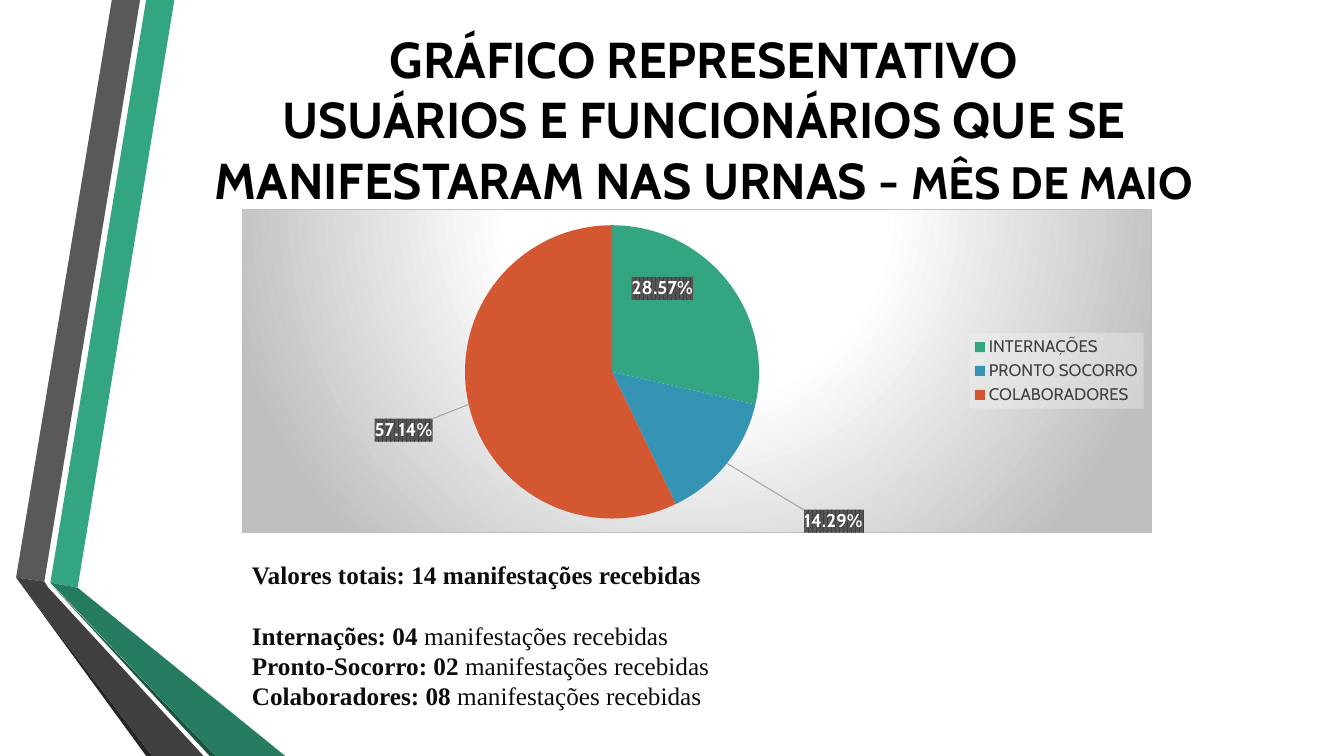
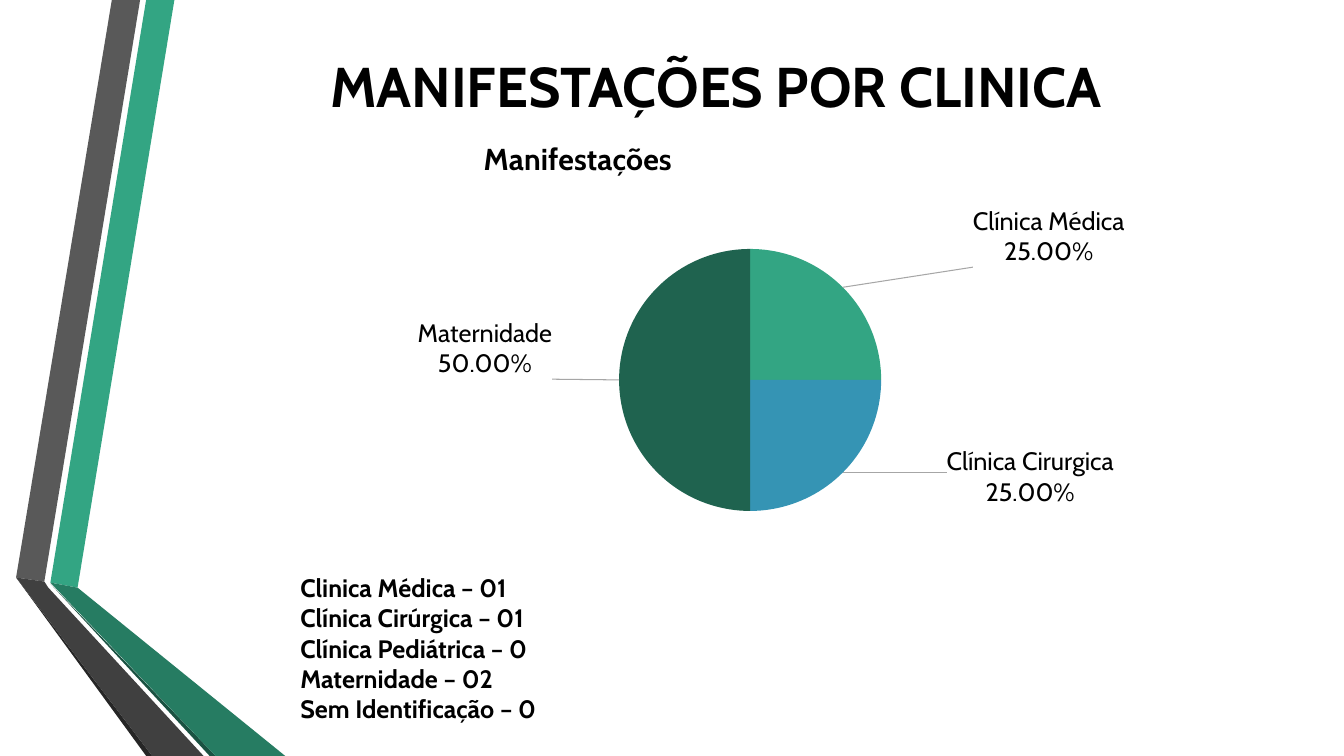
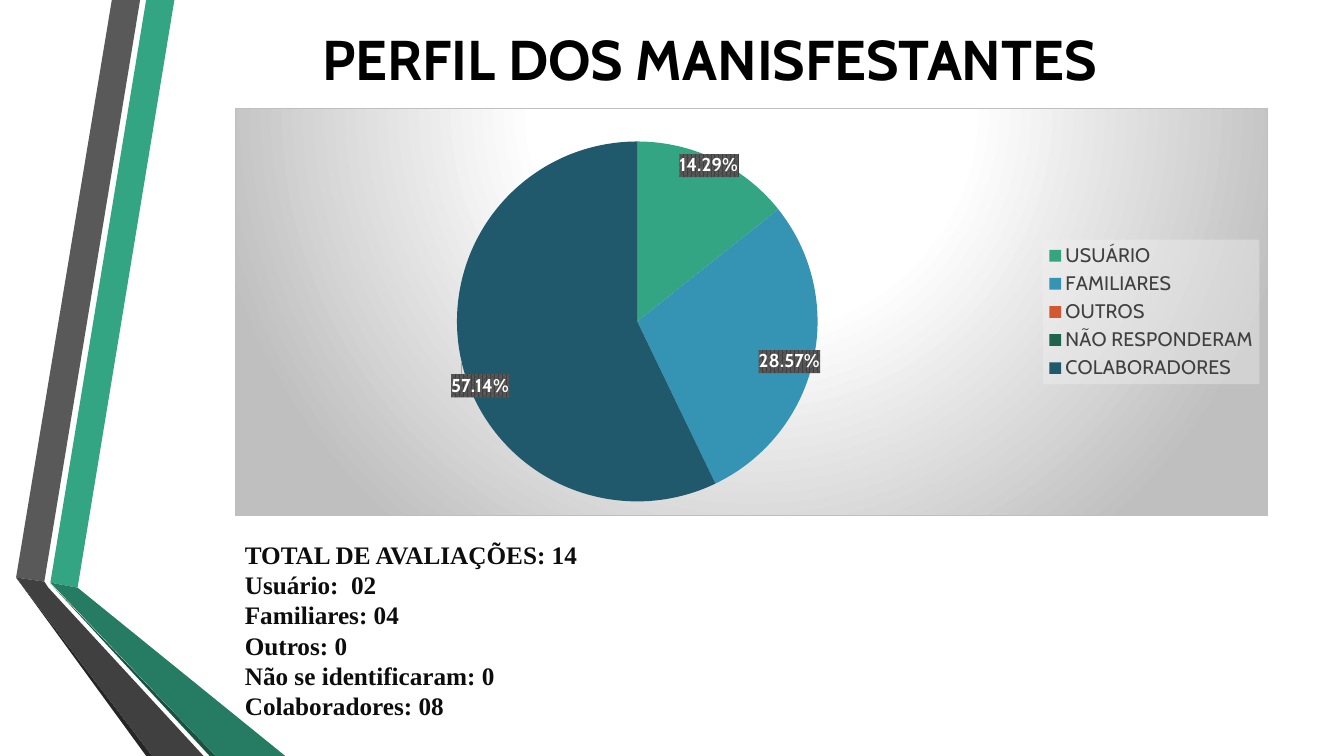
from copy import deepcopy
from dataclasses import dataclass
from math import cos, pi, sin

from lxml import etree
from pptx import Presentation
from pptx.chart.data import CategoryChartData
from pptx.dml.color import RGBColor
from pptx.enum.chart import XL_CHART_TYPE, XL_LABEL_POSITION, XL_LEGEND_POSITION
from pptx.enum.text import MSO_ANCHOR, MSO_AUTO_SIZE, PP_ALIGN
from pptx.oxml import parse_xml
from pptx.oxml.ns import nsdecls, qn
from pptx.util import Inches, Pt

PIE = XL_CHART_TYPE.PIE
LABEL_CENTER = XL_LABEL_POSITION.CENTER
LABEL_OUTSIDE = XL_LABEL_POSITION.OUTSIDE_END
LEGEND_RIGHT = XL_LEGEND_POSITION.RIGHT
MIDDLE = MSO_ANCHOR.MIDDLE
NO_AUTOFIT = MSO_AUTO_SIZE.NONE
CENTER, LEFT, JUSTIFY = PP_ALIGN.CENTER, PP_ALIGN.LEFT, PP_ALIGN.JUSTIFY

LABEL_HEIGHT = 0.6
LABEL_GAP = 0.06


@dataclass(frozen=True)
class Theme:
    heading_font: str = "Cabin"
    body_font: str = "Times New Roman"
    black: str = "000000"
    ink: str = "0D0D0D"
    white: str = "FFFFFF"
    legend_ink: str = "404040"
    panel_edge: str = "BFBFBF"
    leader: str = "A6A6A6"
    green: str = "33A583"
    blue: str = "3594B4"
    orange: str = "D35731"
    dark_green: str = "1F634F"
    dark_blue: str = "20596C"
    title_size: float = 40
    long_title_size: float = 36
    month_size: float = 32.4
    chart_title_size: float = 21.6
    body_size: float = 18
    badge_size: float = 13.3
    chart_size: float = 10


THEME = Theme()
SLICE_COLOURS = (THEME.green, THEME.blue, THEME.orange, THEME.dark_green, THEME.dark_blue)

RIBBONS = (
    (THEME.green, ((0.5, 5.78), (0.77, 5.83), (1.73, 0), (1.45, 0))),
    ("595959", ((1.39, 0), (1.11, 0), (0.16, 5.73), (0.44, 5.77))),
    ("262626", ((0.16, 5.73), (1.45, 7.5), (1.51, 7.5))),
    ("1A5242", ((0.5, 5.79), (2.08, 7.5), (2.14, 7.5))),
    ("267C62", ((0.5, 5.78), (2.14, 7.5), (2.83, 7.5), (0.77, 5.83))),
    ("404040", ((2.02, 7.5), (0.48, 5.83), (0.44, 5.77), (0.16, 5.73), (1.51, 7.5))),
)

PANEL_FILL = f"""<c:spPr {nsdecls("c", "a")}>
<a:gradFill><a:gsLst>
<a:gs pos="0"><a:srgbClr val="{THEME.white}"/></a:gs>
<a:gs pos="39000"><a:srgbClr val="{THEME.white}"/></a:gs>
<a:gs pos="100000"><a:srgbClr val="{THEME.panel_edge}"/></a:gs>
</a:gsLst><a:path path="circle"><a:fillToRect l="50000" t="-80000" r="50000" b="180000"/></a:path></a:gradFill>
<a:ln w="9525"><a:solidFill><a:srgbClr val="{THEME.panel_edge}"/></a:solidFill></a:ln></c:spPr>"""

BADGE_FILL = f"""<c:spPr {nsdecls("c", "a")}><a:pattFill prst="pct75">
<a:fgClr><a:srgbClr val="404040"/></a:fgClr><a:bgClr><a:srgbClr val="595959"/></a:bgClr>
</a:pattFill></c:spPr>"""

LEGEND_FILL = f"""<c:spPr {nsdecls("c", "a")}><a:solidFill>
<a:srgbClr val="F2F2F2"><a:alpha val="39000"/></a:srgbClr></a:solidFill></c:spPr>"""

LEADER_LINES = f"""<c:leaderLines {nsdecls("c", "a")}><c:spPr><a:ln w="9525"><a:solidFill>
<a:srgbClr val="{THEME.leader}"/></a:solidFill></a:ln></c:spPr></c:leaderLines>"""


def style_font(font, size, colour, bold=False, name=THEME.heading_font):
    font.name = name
    font.size = Pt(size)
    font.bold = bold
    font.color.rgb = RGBColor.from_string(colour)


def manual_layout(**settings):
    layout = etree.Element(qn("c:layout"))
    manual = etree.SubElement(layout, qn("c:manualLayout"))
    for tag, value in settings.items():
        text = value if isinstance(value, str) else f"{value:.4f}"
        etree.SubElement(manual, qn(f"c:{tag}")).set("val", text)
    return layout


def set_layout(parent, index, **settings):
    for old in parent.findall(qn("c:layout")):
        parent.remove(old)
    parent.insert(index, manual_layout(**settings))


def outward(amount):
    return 0 if abs(amount) < 0.05 else (1 if amount > 0 else -1)


class Report:
    def __init__(self):
        self.deck = Presentation()
        self.deck.slide_width, self.deck.slide_height = Inches(13.33), Inches(7.5)
        self.layout = self.deck.slide_layouts[5]
        self.slide = None

    def add_slide(self):
        first = self.slide is None
        self.slide = self.deck.slides.add_slide(self.layout)
        if first:
            self.share_ribbons()

    def share_ribbons(self):
        group = self.slide.shapes.add_group_shape()
        for colour, points in RIBBONS:
            corners = [(Inches(x), Inches(y)) for x, y in points]
            builder = group.shapes.build_freeform(*corners[0])
            builder.add_line_segments(corners[1:], close=True)
            ribbon = builder.convert_to_shape()
            ribbon.shadow.inherit = False
            ribbon.fill.solid()
            ribbon.fill.fore_color.rgb = RGBColor.from_string(colour)
            ribbon.line.fill.background()
        for number, properties in enumerate(group.element.iter(qn("p:cNvPr")), 100):
            properties.set("id", str(number))
        self.layout.shapes.element.append(group.element)

    def title(self, text, area, size=THEME.title_size, ending=""):
        title = self.slide.shapes.title
        title.left, title.top, title.width, title.height = map(Inches, area)
        frame = title.text_frame
        frame.text = text
        frame.word_wrap = True
        frame.auto_size = NO_AUTOFIT
        frame.vertical_anchor = MIDDLE
        para = frame.paragraphs[0]
        para.alignment = CENTER
        for span in para.runs:
            style_font(span.font, size, THEME.black, True)
        if ending:
            span = para.add_run()
            span.text = ending
            style_font(span.font, THEME.month_size, THEME.black, True)

    def summary(self, lines, area, font=THEME.body_font, colour=THEME.ink,
                alignment=LEFT, first_gap=0):
        box = self.slide.shapes.add_textbox(*map(Inches, area))
        frame = box.text_frame
        frame.word_wrap = True
        for index, (strong, plain) in enumerate(lines):
            para = frame.add_paragraph() if index else frame.paragraphs[0]
            para.text = strong
            para.alignment = alignment
            if index == 1 and first_gap:
                para.space_before = Pt(first_gap)
            if plain:
                para.add_run().text = plain
            for position, span in enumerate(para.runs):
                style_font(span.font, THEME.body_size, colour, position == 0, font)

    def pie(self, name, slices, area, center, radius, label_centers,
            heading=None, legend_size=None, label_widths=()):
        data = CategoryChartData()
        data.categories = [category for category, _ in slices]
        data.add_series(name, [value for _, value in slices])
        chart = self.slide.shapes.add_chart(PIE, *map(Inches, area), data).chart
        style_font(chart.font, THEME.body_size if heading else THEME.chart_size, THEME.black)
        left, top, width, height = area
        set_layout(chart.element.find(f".//{qn('c:plotArea')}"), 0,
                   layoutTarget="inner", xMode="edge", yMode="edge",
                   x=(center[0] - radius - left) / width,
                   y=(center[1] - radius - top) / height,
                   w=2 * radius / width, h=2 * radius / height)
        plot = chart.plots[0]
        plot.vary_by_categories = True
        for index in range(len(slices)):
            fill = plot.series[0].points[index].format.fill
            fill.solid()
            fill.fore_color.rgb = RGBColor.from_string(SLICE_COLOURS[index])
        chart.has_title = bool(heading)
        if heading:
            frame = chart.chart_title.text_frame
            frame.text = heading
            style_font(frame.paragraphs[0].runs[0].font, THEME.chart_title_size, THEME.black, True)
            set_layout(chart.chart_title.element, 1, xMode="edge", yMode="edge", x=0.24, y=0.02)
        chart.has_legend = bool(legend_size)
        if legend_size:
            chart.legend.position = LEGEND_RIGHT
            chart.legend.include_in_layout = False
            style_font(chart.legend.font, legend_size, THEME.legend_ink)
            for owner, fill in ((chart.element, PANEL_FILL),
                                (chart.element.find(f".//{qn('c:legend')}"), LEGEND_FILL)):
                owner.find(qn("c:txPr")).addprevious(parse_xml(fill))
        shared = self.label_style(plot.series[0].data_labels, bool(label_widths))
        self.place_labels(plot.series[0].data_labels._element, shared, slices, area,
                          center, radius, label_centers, label_widths)

    def label_style(self, labels, named):
        labels.show_value = False
        labels.show_percentage = True
        labels.show_category_name = named
        labels.number_format = "0.00%"
        labels.number_format_is_linked = False
        labels.position = LABEL_OUTSIDE if named else LABEL_CENTER
        if named:
            style_font(labels.font, THEME.body_size, THEME.black)
        else:
            style_font(labels.font, THEME.badge_size, THEME.white, True)
        root = labels._element
        text_style = root.find(qn("c:txPr"))
        text_style.find(qn("a:bodyPr")).set("wrap", "none")
        if not named:
            text_style.addprevious(parse_xml(BADGE_FILL))
        separator = etree.Element(qn("c:separator"))
        separator.text = "\n"
        root.find(qn("c:showBubbleSize")).addnext(separator)
        shared = [child for child in root if child.tag != qn("c:showLeaderLines")]
        for child in root.findall(qn("c:showLeaderLines")):
            child.set("val", "1")
            child.addnext(parse_xml(LEADER_LINES))
        return shared

    def place_labels(self, root, shared, slices, area, center, radius, label_centers, label_widths):
        total = sum(value for _, value in slices)
        targets = iter(label_centers)
        widths = iter(label_widths)
        start = 0
        for index, (_, value) in enumerate(slices):
            label = etree.Element(qn("c:dLbl"))
            etree.SubElement(label, qn("c:idx")).set("val", str(index))
            if value:
                angle = 2 * pi * (start + value / 2) / total
                across, down = sin(angle), -cos(angle)
                distance = radius + LABEL_GAP if label_widths else radius / 2
                default_x = center[0] + distance * across
                default_y = center[1] + distance * down
                if label_widths:
                    default_x += outward(across) * next(widths) / 2
                    default_y += outward(down) * LABEL_HEIGHT / 2
                x, y = next(targets)
                label.append(manual_layout(x=(x - default_x) / area[2], y=(y - default_y) / area[3]))
                label.extend([deepcopy(child) for child in shared])
            else:
                etree.SubElement(label, qn("c:delete")).set("val", "1")
            root.insert(index, label)
            start += value


def main():
    report = Report()

    report.add_slide()
    report.title("GRÁFICO REPRESENTATIVO\vUSUÁRIOS E FUNCIONÁRIOS QUE SE MANIFESTARAM NAS URNAS - ",
                 (1.22, 0.28, 11.52, 1.79), THEME.long_title_size, "MÊS DE MAIO")
    report.pie("Series 1",
               [("INTERNAÇÕES", 28.57), ("PRONTO SOCORRO", 14.29), ("COLABORADORES", 57.14)],
               (2.4, 2.07, 9.03, 3.22), (6.07, 3.69), 1.46,
               [(6.57, 2.86), (8.27, 5.18), (4, 4.27)], legend_size=12)
    received = "manifestações recebidas"
    report.summary([("Valores totais: 14 manifestações recebidas", ""),
                    ("Internações: 04 ", received),
                    ("Pronto-Socorro: 02 ", received),
                    ("Colaboradores: 08 ", received)],
                   (2.4, 5.5, 9.03, 1.62), alignment=JUSTIFY, first_gap=21.6)

    report.add_slide()
    report.title("MANIFESTAÇÕES POR CLINICA", (1.62, 0.27, 10.96, 1.15))
    report.pie("Manifestações",
               [("Clínica Médica", 25), ("Clínica Cirurgica", 25), ("Clinica Pediátrica", 0),
                ("Maternidade", 50), ("Sem identificação", 0)],
               (2.22, 1.22, 10.51, 4.4), (7.44, 3.77), 1.3,
               [(10.4, 2.35), (10.22, 4.73), (4.81, 3.46)],
               heading="Manifestações", label_widths=(1.5, 1.66, 1.33))
    report.summary([(line, "") for line in (
                       "Clinica Médica – 01", "Clínica Cirúrgica – 01", "Clínica Pediátrica – 0",
                       "Maternidade – 02", "Sem Identificação – 0")],
                   (2.88, 5.63, 8.44, 1.6), THEME.heading_font, THEME.black)

    report.add_slide()
    report.title("PERFIL DOS MANISFESTANTES ", (1.62, 0.09, 10.96, 0.98))
    report.pie("Series 1",
               [("USUÁRIO", 14.29), ("FAMILIARES", 28.57), ("OUTROS", 0),
                ("NÃO RESPONDERAM", 0), ("COLABORADORES", 57.14)],
               (2.33, 1.07, 10.25, 4.05), (6.32, 3.19), 1.79,
               [(7.03, 1.64), (7.83, 3.59), (4.76, 3.83)], legend_size=14)
    report.summary([(line, "") for line in (
                       "TOTAL DE AVALIAÇÕES: 14", "Usuário:  02", "Familiares: 04",
                       "Outros: 0", "Não se identificaram: 0", "Colaboradores: 08")],
                   (2.33, 5.3, 3.98, 1.9))

    report.deck.save("out.pptx")


if __name__ == "__main__":
    main()
